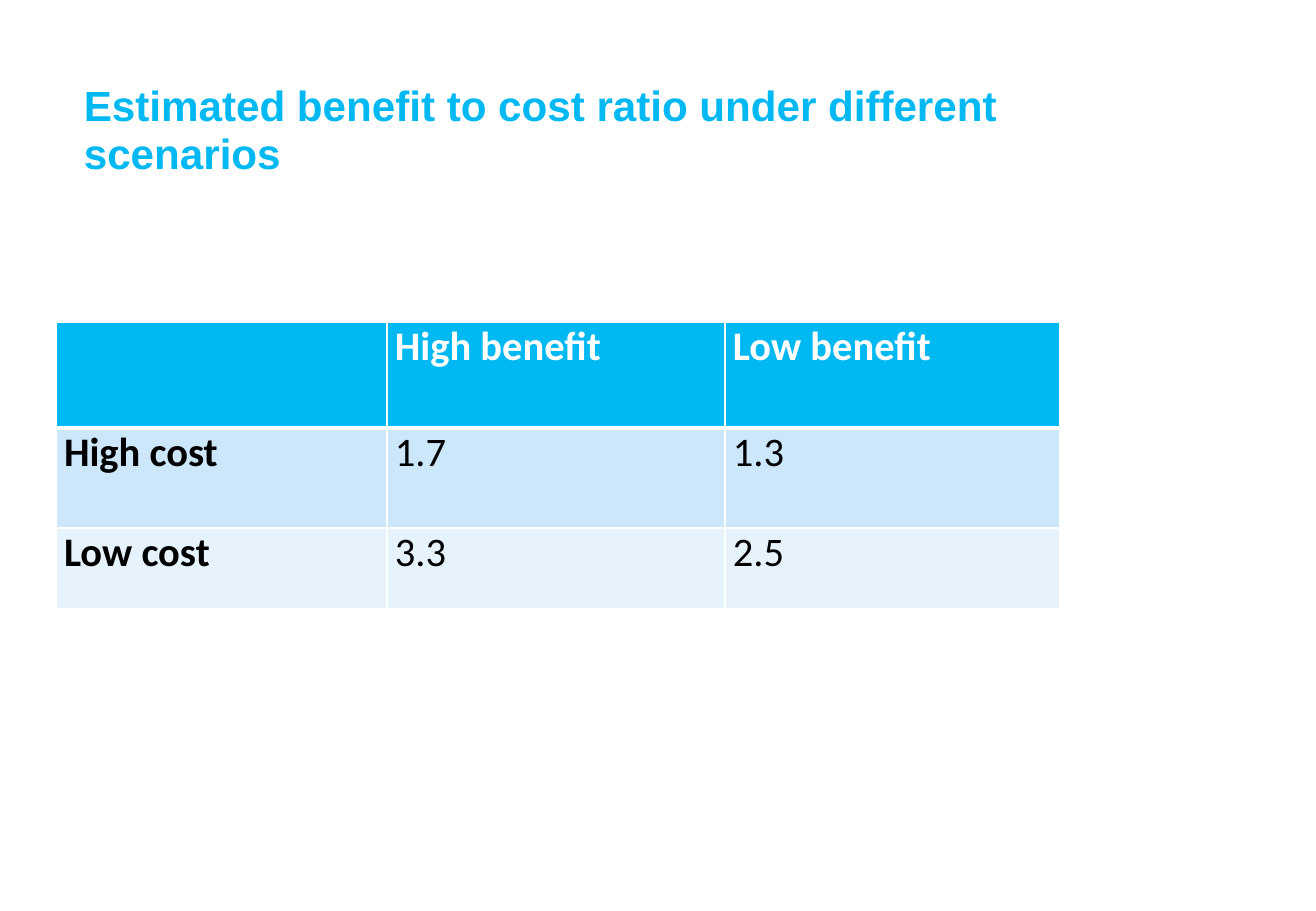
"""Build a slide with a table of benefit to cost ratios under different scenarios."""
from lxml import etree
from pptx import Presentation
from pptx.dml.color import RGBColor
from pptx.enum.text import MSO_ANCHOR
from pptx.oxml.ns import qn
from pptx.util import Pt

PX = 7526
TOP = MSO_ANCHOR.TOP
COLORS = {
    "accent": "00B8F2",
    "high_row": "CCE6FA",
    "low_row": "E7F3FC",
    "white": "FFFFFF",
    "black": "000000",
}


def write_text(frame, text, font, size, color, bold=False, spacing=1.0):
    paragraph = frame.paragraphs[0]
    paragraph.line_spacing = spacing
    run = paragraph.add_run()
    run.text = text
    run.font.name = font
    run.font.size = Pt(size)
    run.font.bold = bold
    run.font.color.rgb = RGBColor.from_string(COLORS[color])


def add_border(cell, side, points):
    line = etree.SubElement(cell._tc.get_or_add_tcPr(), qn(f"a:ln{side}"), w=str(Pt(points)))
    fill = etree.SubElement(line, qn("a:solidFill"))
    etree.SubElement(fill, qn("a:srgbClr"), val=COLORS["white"])


presentation = Presentation()
presentation.slide_width = 1316 * PX
presentation.slide_height = 911 * PX
slide = presentation.slides.add_slide(presentation.slide_layouts[6])

title = slide.shapes.add_textbox(72 * PX, 77 * PX, 956 * PX, 96 * PX)
title.text_frame.word_wrap = True
title.text_frame.vertical_anchor = TOP
write_text(title.text_frame, "Estimated benefit to cost ratio under different scenarios",
           font="Arial", size=25, color="accent", bold=True, spacing=0.95)

rows = [
    ("", "High benefit", "Low benefit"),
    ("High cost", "1.7", "1.3"),
    ("Low cost", "3.3", "2.5"),
]
row_fills = ["accent", "high_row", "low_row"]
row_heights = [106, 100, 81]
column_widths = [331, 338, 335]

table = slide.shapes.add_table(
    len(rows), len(column_widths), 56 * PX, 322 * PX,
    sum(column_widths) * PX, sum(row_heights) * PX).table
for column, width in zip(table.columns, column_widths):
    column.width = width * PX

for row_index, labels in enumerate(rows):
    table.rows[row_index].height = row_heights[row_index] * PX
    is_header = row_index == 0
    for column_index, label in enumerate(labels):
        cell = table.cell(row_index, column_index)
        cell.margin_left = cell.margin_right = 8 * PX
        cell.margin_top = cell.margin_bottom = 0
        cell.vertical_anchor = TOP
        for side in "LRTB":
            thick = (row_index, side) in [(0, "B"), (1, "T")]
            add_border(cell, side, 3 if thick else 1)
        cell.fill.solid()
        cell.fill.fore_color.rgb = RGBColor.from_string(COLORS[row_fills[row_index]])
        if label:
            write_text(cell.text_frame, label, font="Calibri", size=24,
                       color="white" if is_header else "black",
                       bold=is_header or column_index == 0)

presentation.save("out.pptx")
